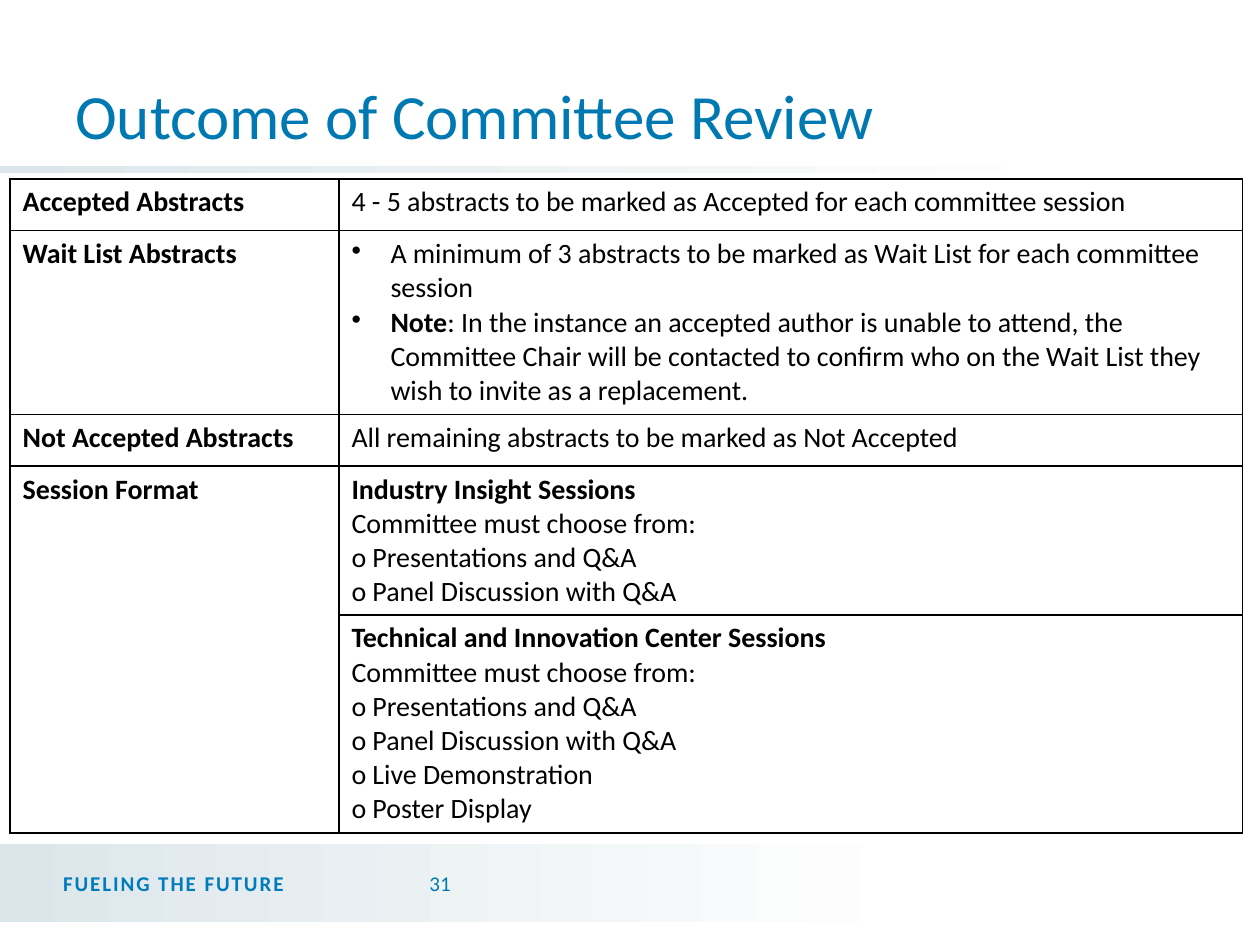
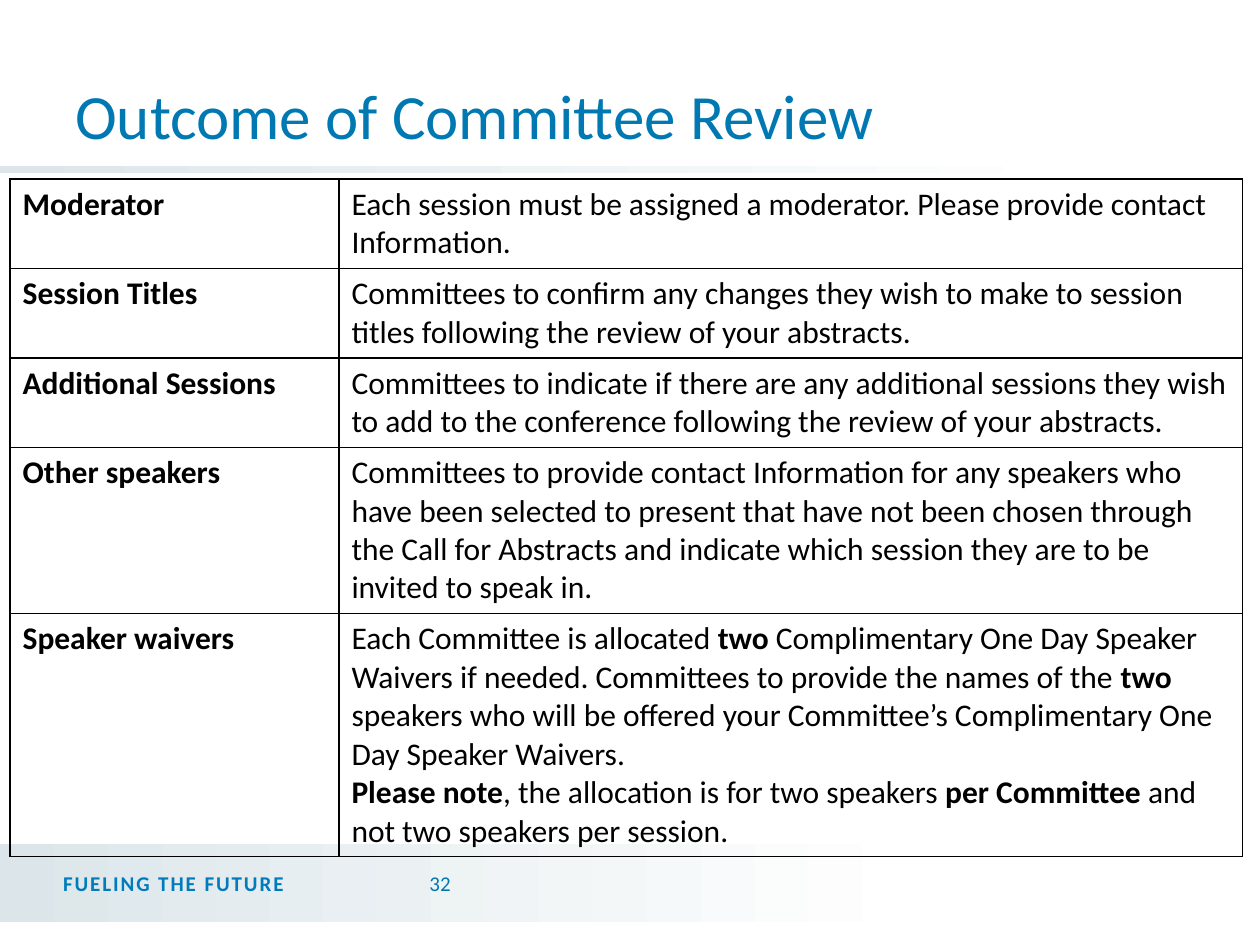
from dataclasses import dataclass

from lxml import etree
from pptx import Presentation
from pptx.dml.color import RGBColor
from pptx.enum.shapes import MSO_SHAPE
from pptx.enum.text import MSO_ANCHOR
from pptx.oxml.ns import qn
from pptx.util import Inches, Pt

RECTANGLE = MSO_SHAPE.RECTANGLE
MIDDLE, BOTTOM = MSO_ANCHOR.MIDDLE, MSO_ANCHOR.BOTTOM


@dataclass(frozen=True)
class Theme:
    font: str = "Calibri"
    title_color: str = "0079B3"
    tagline_color: str = "007BBC"
    text_color: str = "000000"
    band_start: str = "DCE6EA"
    band_end: str = "FFFFFF"
    title_size: int = 36
    footer_size: int = 12


theme = Theme()

# Shared parts: gradient bands as (left, top, width, height, end of gradient)
BANDS = [(0, 6.7, 7.42, 0.62, 0.98), (0, 1.32, 9.5, 0.05, 0.89)]
TITLE = "Outcome of Committee Review"
TAGLINE = "FUELING THE FUTURE"
COLUMN_WIDTHS = [2.61, 7.17]
BULLET = "• "

# Table rows: height, label, paragraphs; ** switches bold on and off,
# and a row without a label continues the label cell above it
FORMATS = ["Committee must choose from:", "o Presentations and Q&A", "o Panel Discussion with Q&A"]
SLIDES = [
    (31, 16, [
        (0.41, "Accepted Abstracts",
         ["4 - 5 abstracts to be marked as Accepted for each committee session"]),
        (1.46, "Wait List Abstracts",
         ["• A minimum of 3 abstracts to be marked as Wait List for each committee session",
          "• **Note**: In the instance an accepted author is unable to attend, the Committee Chair "
          "will be contacted to confirm who on the Wait List they wish to invite as a replacement."]),
        (0.41, "Not Accepted Abstracts",
         ["All remaining abstracts to be marked as Not Accepted"]),
        (1.18, "Session Format", ["**Industry Insight Sessions**", *FORMATS]),
        (1.73, None,
         ["**Technical and Innovation Center Sessions**", *FORMATS,
          "o Live Demonstration", "o Poster Display"]),
    ]),
    (32, 18, [
        (0.71, "Moderator",
         ["Each session must be assigned a moderator. Please provide contact", "Information."]),
        (0.71, "Session Titles",
         ["Committees to confirm any changes they wish to make to session titles following "
          "the review of your abstracts."]),
        (0.71, "Additional Sessions",
         ["Committees to indicate if there are any additional sessions they wish to add to "
          "the conference following the review of your abstracts."]),
        (1.32, "Other speakers",
         ["Committees to provide contact Information for any speakers who have been selected "
          "to present that have not been chosen through the Call for Abstracts and indicate "
          "which session they are to be invited to speak in."]),
        (1.93, "Speaker waivers",
         ["Each Committee is allocated **two **Complimentary One Day Speaker",
          "Waivers if needed. Committees to provide the names of the **two **speakers who will "
          "be offered your Committee’s Complimentary One Day Speaker Waivers.",
          "**Please note**, the allocation is for two speakers **per Committee **and not two "
          "speakers per session."]),
    ]),
]


def write_paragraph(paragraph, text, size, color):
    """Write text with ** bold marks and an optional leading bullet."""
    if text.startswith(BULLET):
        text = text.removeprefix(BULLET)
        properties = paragraph._p.get_or_add_pPr()
        properties.set("marL", str(Inches(0.31)))
        properties.set("indent", str(-Inches(0.31)))
        etree.SubElement(properties, qn("a:buChar")).set("char", BULLET.strip())
    paragraph.font.name = theme.font
    paragraph.font.size = Pt(size)
    paragraph.font.color.rgb = RGBColor.from_string(color)
    for index, part in enumerate(text.split("**")):
        if part:
            run = paragraph.add_run()
            run.text = part
            run.font.bold = index % 2 == 1


def add_label(slide, box, text, size, color, anchor, left_inset=0.1):
    """Add a one-line text box and return its paragraph."""
    frame = slide.shapes.add_textbox(*map(Inches, box)).text_frame
    frame.word_wrap = True
    frame.vertical_anchor = anchor
    frame.margin_left = Inches(left_inset)
    write_paragraph(frame.paragraphs[0], text, size, color)
    return frame.paragraphs[0]


presentation = Presentation()
presentation.slide_width, presentation.slide_height = Inches(10), Inches(7.5)
blank_layout = presentation.slide_layouts[6]

for number, table_size, rows in SLIDES:
    slide = presentation.slides.add_slide(blank_layout)

    # Gradient bands under the title and behind the footer
    for *box, gradient_end in BANDS:
        band = slide.shapes.add_shape(RECTANGLE, *map(Inches, box))
        band.shadow.inherit = False
        band.line.fill.background()
        band.fill.gradient()
        band.fill.gradient_angle = 0
        stops = zip(band.fill.gradient_stops, (0, gradient_end), (theme.band_start, theme.band_end))
        for stop, position, color in stops:
            stop.position = position
            stop.color.rgb = RGBColor.from_string(color)

    # Footer and title
    tagline = add_label(slide, (0.5, 6.81, 2.81, 0.4), f"**{TAGLINE}**",
                        theme.footer_size, theme.tagline_color, MIDDLE, left_inset=0)
    tagline.runs[0]._r.get_or_add_rPr().set("spc", "110")
    add_label(slide, (3.31, 6.81, 0.8, 0.4), str(number),
              theme.footer_size, theme.title_color, MIDDLE)
    add_label(slide, (0.5, 0.01, 9, 1.25), TITLE, theme.title_size, theme.title_color, BOTTOM)

    # Table
    table_height = sum(height for height, _, _ in rows)
    table = slide.shapes.add_table(len(rows), len(COLUMN_WIDTHS), Inches(0.08), Inches(1.42),
                                   Inches(sum(COLUMN_WIDTHS)), Inches(table_height)).table
    table.first_row = table.horz_banding = False
    for column, width in zip(table.columns, COLUMN_WIDTHS):
        column.width = Inches(width)

    for row_index, (height, label, texts) in enumerate(rows):
        table.rows[row_index].height = Inches(height)
        label_texts = [f"**{label}**"] if label else []
        for column_index, cell_texts in enumerate((label_texts, texts)):
            cell = table.cell(row_index, column_index)
            for text_index, text in enumerate(cell_texts):
                frame = cell.text_frame
                paragraph = frame.add_paragraph() if text_index else frame.paragraphs[0]
                write_paragraph(paragraph, text, table_size, theme.text_color)

            # Thin black borders and no fill
            cell_properties = cell._tc.get_or_add_tcPr()
            for side in ("lnL", "lnR", "lnT", "lnB"):
                border = etree.SubElement(cell_properties, qn(f"a:{side}"), w=str(Pt(1)))
                border_fill = etree.SubElement(border, qn("a:solidFill"))
                etree.SubElement(border_fill, qn("a:srgbClr"), val=theme.text_color)
            cell.fill.background()
        if label is None:
            table.cell(row_index - 1, 0).merge(table.cell(row_index, 0))

presentation.save("out.pptx")
